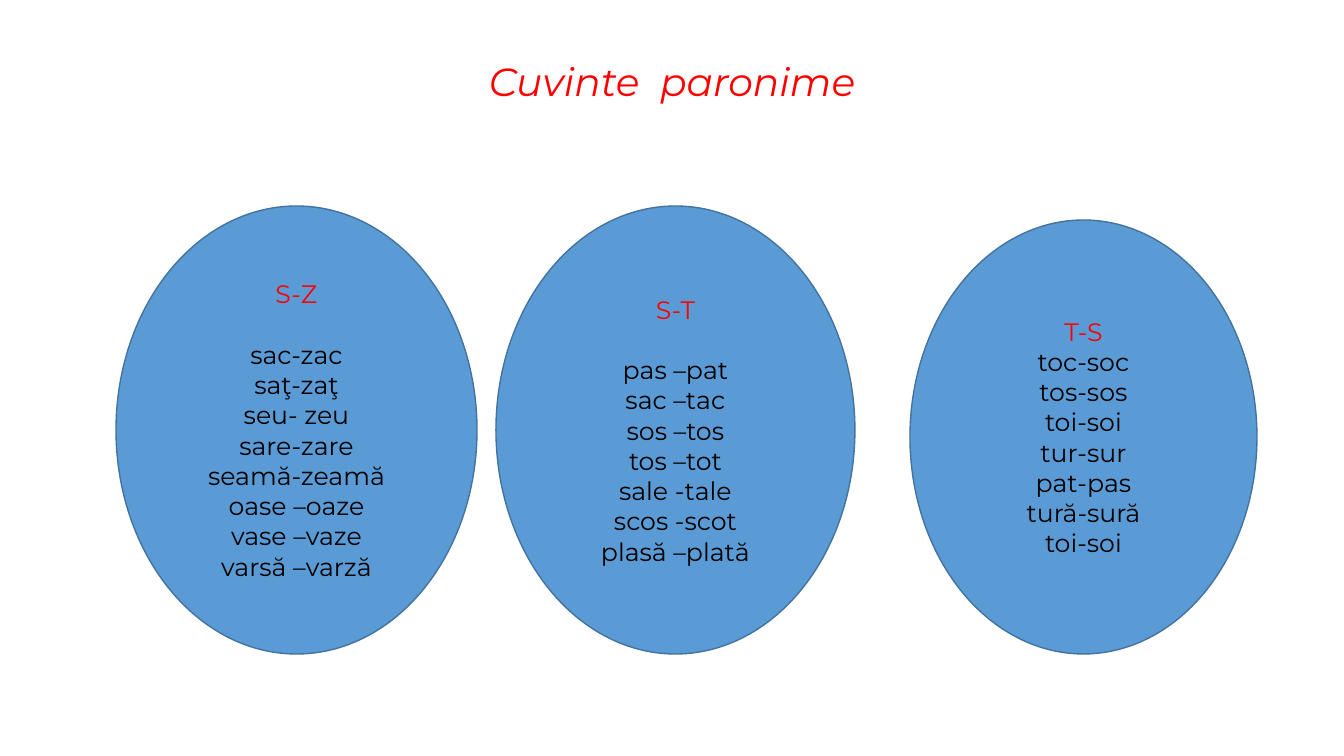
from pptx import Presentation
from pptx.dml.color import RGBColor
from pptx.enum.shapes import MSO_SHAPE as Shape
from pptx.enum.text import MSO_ANCHOR as Anchor, PP_ALIGN as Align
from pptx.util import Pt

PX = 914400 / 100.8
RED, BLACK, BLUE, OUTLINE = "FF0000", "000000", "5B9BD5", "43739E"


def color(code):
    return RGBColor.from_string(code)


def write(para, text, size, code):
    para.text = text
    para.alignment = Align.CENTER
    para.font.name = "Montserrat"
    para.font.size = Pt(size)
    para.font.color.rgb = color(code)


deck = Presentation()
deck.slide_width, deck.slide_height = round(1344 * PX), round(756 * PX)
page = deck.slides.add_slide(deck.slide_layouts[6])

# Title
title = page.shapes.add_textbox(*(round(n * PX) for n in (168, 41, 1008, 69)))
title.text_frame.word_wrap = True
title.text_frame.vertical_anchor = Anchor.BOTTOM
para = title.text_frame.paragraphs[0]
write(para, "Cuvinte  paronime", 28, RED)
para.font.italic = True
para.line_spacing = 0.9

# Word groups: position, heading, gap below the heading in points, pairs
groups = [
    ((116, 206, 361, 448), "S-Z", 21.6,
     ["sac-zac", "saţ-zaţ", "seu- zeu", "sare-zare", "seamă-zeamă",
      "oase –oaze", "vase –vaze", "varsă –varză"]),
    ((496, 206, 359, 448), "S-T", 21.6,
     ["pas –pat", "sac –tac", "sos –tos", "tos –tot", "sale -tale",
      "scos -scot", "plasă –plată"]),
    ((910, 220, 347, 434), "T-S", 0,
     ["toc-soc", "tos-sos", "toi-soi", "tur-sur", "pat-pas",
      "tură-sură", "toi-soi"]),
]

for place, heading, gap, pairs in groups:
    oval = page.shapes.add_shape(Shape.OVAL, *(round(n * PX) for n in place))
    oval.shadow.inherit = False
    oval.fill.solid()
    oval.fill.fore_color.rgb = color(BLUE)
    oval.line.color.rgb = color(OUTLINE)
    oval.line.width = Pt(1)

    frame = oval.text_frame
    frame.word_wrap = True
    frame.vertical_anchor = Anchor.MIDDLE
    para = frame.paragraphs[0]
    write(para, heading, 18, RED)
    para.space_after = Pt(gap)
    for pair in pairs:
        write(frame.add_paragraph(), pair, 18, BLACK)

deck.save("out.pptx")
